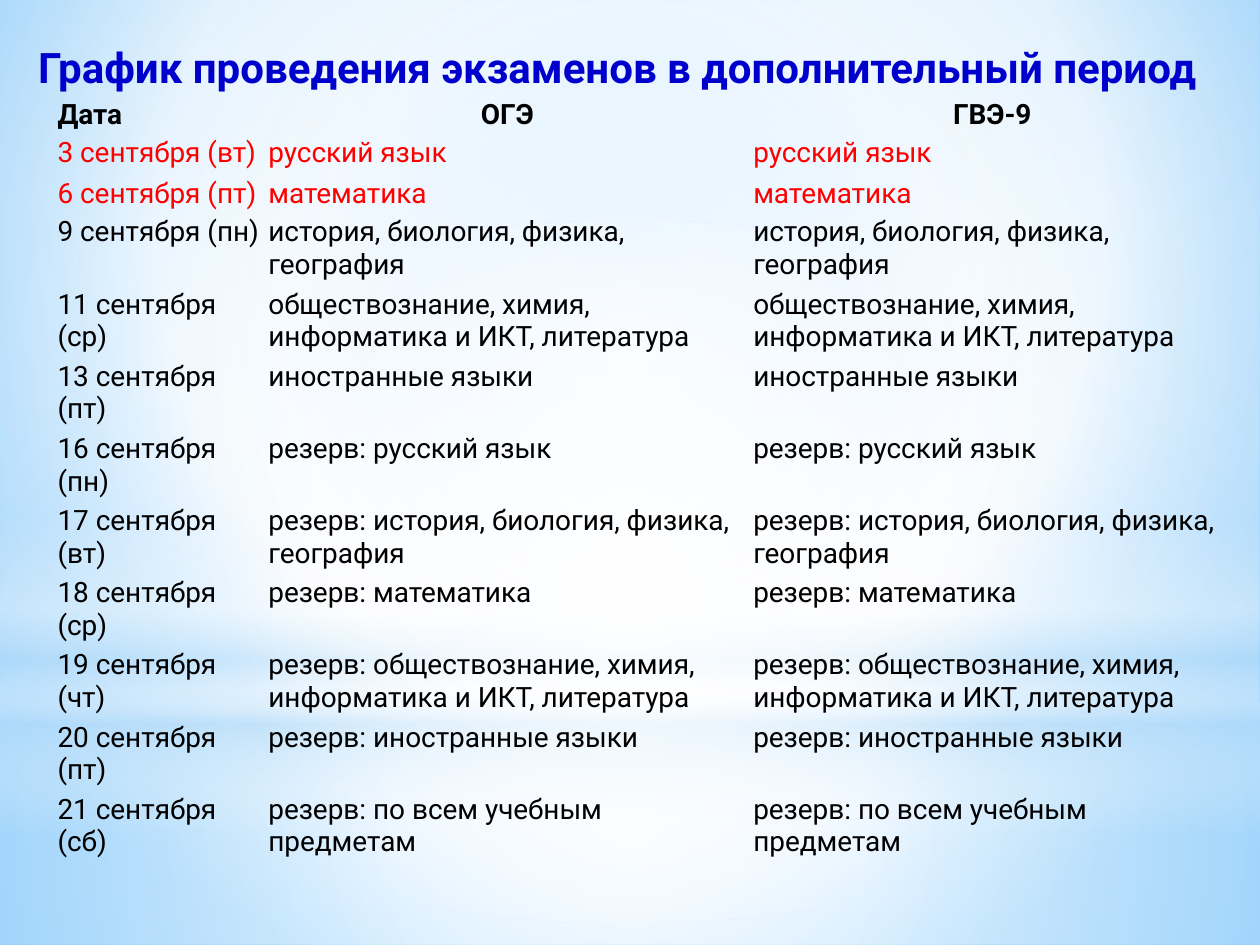
from dataclasses import dataclass

from lxml import etree
from pptx import Presentation
from pptx.dml.color import RGBColor
from pptx.enum.shapes import MSO_SHAPE
from pptx.enum.text import PP_ALIGN
from pptx.oxml.ns import qn
from pptx.util import Cm, Pt

RECT, OVAL = MSO_SHAPE.RECTANGLE, MSO_SHAPE.OVAL
LEFT, CENTER = PP_ALIGN.LEFT, PP_ALIGN.CENTER
NO_STYLE = "{2D5ABB26-0587-4C30-8999-92F81FD0307C}"


@dataclass(frozen=True)
class Theme:
    font: str = "Roboto"
    title_size: int = 24
    body_size: int = 16
    title: str = "0000CC"
    text: str = "000000"
    accent: str = "FF0000"
    white: str = "FFFFFF"
    haze: str = "B4DCFA"
    sky: str = "9ED5FF"
    deep_sky: str = "5BB9FF"


THEME = Theme()
MIDDLE = (50, 50, 50, 50)

HEADER = ("Дата", "ОГЭ", "ГВЭ-9")
# Date, subjects (the same for both exams), row height in cm
EXAMS = [
    ("3 сентября (вт)", "русский язык", 0.82),
    ("6 сентября (пт)", "математика", 0.43),
    ("9 сентября (пн)", "история, биология, физика, география", 0.82),
    ("11 сентября (ср)", "обществознание, химия, информатика и ИКТ, литература", 0.82),
    ("13 сентября (пт)", "иностранные языки", 0.82),
    ("16 сентября (пн)", "резерв: русский язык", 0.82),
    ("17 сентября (вт)", "резерв: история, биология, физика, география", 0.82),
    ("18 сентября (ср)", "резерв: математика", 0.82),
    ("19 сентября (чт)", "резерв: обществознание, химия, информатика и ИКТ, литература", 1.07),
    ("20 сентября (пт)", "резерв: иностранные языки", 0.82),
    ("21 сентября (сб)", "резерв: по всем учебным предметам", 0.82),
]
MAIN_EXAMS = 2  # the first dates are shown in the accent colour


def set_gradient(fill, parent, stops, focus=None):
    """Gradient of (position, colour, opacity): circular to focus, else downwards."""
    fill.solid()
    grad = etree.Element(qn("a:gradFill"), rotWithShape="1")
    gs_list = etree.SubElement(grad, qn("a:gsLst"))
    for pos, color, opacity in stops:
        gs = etree.SubElement(gs_list, qn("a:gs"), pos=str(pos * 1000))
        clr = etree.SubElement(gs, qn("a:srgbClr"), val=color)
        if opacity < 100:
            etree.SubElement(clr, qn("a:alpha"), val=str(opacity * 1000))
    if focus:
        circle = etree.SubElement(grad, qn("a:path"), path="circle")
        sides = {side: str(v * 1000) for side, v in zip("ltrb", focus)}
        etree.SubElement(circle, qn("a:fillToRect"), **sides)
    else:
        etree.SubElement(grad, qn("a:lin"), ang="5400000", scaled="0")
    parent.replace(parent.find(qn("a:solidFill")), grad)


def style_paragraph(p, size, color, bold=False, align=LEFT):
    p.alignment = align
    p.font.name = THEME.font
    p.font.size = Pt(size)
    p.font.bold = bold
    p.font.color.rgb = RGBColor.from_string(color)


def add_backdrop(slide, x, y, w, h):
    t = THEME
    bg_pr = slide.background.fill, slide.element.find(".//" + qn("p:bgPr"))
    slide.background.fill.solid()
    bg_pr = slide.element.find(".//" + qn("p:bgPr"))
    set_gradient(slide.background.fill, bg_pr,
                 [(0, t.sky, 100), (60, t.white, 100), (100, t.deep_sky, 100)],
                 (20, 10, 20, 60))

    # Layers of haze: shape, top, height, stops, focus
    horizon = 14.17
    layers = [
        (RECT, horizon, h - horizon,
         [(0, t.white, 91), (37, t.white, 76), (100, t.haze, 79)], MIDDLE),
        (RECT, 0, horizon,
         [(0, t.white, 89), (48, t.white, 62), (100, t.haze, 79)], MIDDLE),
        (RECT, 10.46, 6.35,
         [(0, t.white, 0), (29, t.white, 30), (45, t.haze, 40),
          (55, t.white, 26), (65, t.haze, 60), (100, t.white, 0)], None),
        (OVAL, 4.45, horizon, [(0, t.white, 100), (56, t.white, 0)], MIDDLE),
    ]
    for kind, top, height, stops, focus in layers:
        sp = slide.shapes.add_shape(kind, Cm(x), Cm(y + top), Cm(w), Cm(height))
        sp.shadow.inherit = False
        sp.line.fill.background()
        set_gradient(sp.fill, sp.element.spPr, stops, focus)


def add_title(slide, x, y, w, h):
    tf = slide.shapes.add_textbox(Cm(x), Cm(y), Cm(w), Cm(h)).text_frame
    tf.word_wrap = True
    p = tf.paragraphs[0]
    p.text = "График проведения экзаменов в дополнительный период"
    style_paragraph(p, THEME.title_size, THEME.title, True, CENTER)


def add_schedule(slide, x, y, w, h):
    rows = [(HEADER, 0.33)] + [((date, exam, exam), height)
                               for date, exam, height in EXAMS]
    frame = slide.shapes.add_table(len(rows), len(HEADER), Cm(x), Cm(y), Cm(w), Cm(h))
    frame.element.find(".//" + qn("a:tableStyleId")).text = NO_STYLE
    table = frame.table
    table.first_row = table.horz_banding = False

    date_w = 4.25
    exam_w = (w - date_w) / 2
    for col, width in zip(table.columns, (date_w, exam_w, exam_w)):
        col.width = Cm(width)

    for i, (texts, height) in enumerate(rows):
        table.rows[i].height = Cm(height)
        header = i == 0
        color = THEME.accent if 1 <= i <= MAIN_EXAMS else THEME.text
        for j, text in enumerate(texts):
            cell = table.cell(i, j)
            cell.fill.background()
            cell.margin_left = cell.margin_right = Cm(0.07)
            cell.margin_top = cell.margin_bottom = Cm(0.05)
            p = cell.text_frame.paragraphs[0]
            p.text = text
            style_paragraph(p, THEME.body_size, color, header,
                            CENTER if header and j else LEFT)


def main():
    prs = Presentation()
    prs.slide_width, prs.slide_height = Cm(25.4), Cm(19.05)
    slide = prs.slides.add_slide(prs.slide_layouts[6])
    add_backdrop(slide, 0, 0, 25.4, 19.05)
    add_title(slide, 0, 0.71, 24.9, 1.27)
    add_schedule(slide, 1.09, 1.93, 23.8, 15.29)
    prs.save("out.pptx")


if __name__ == "__main__":
    main()
